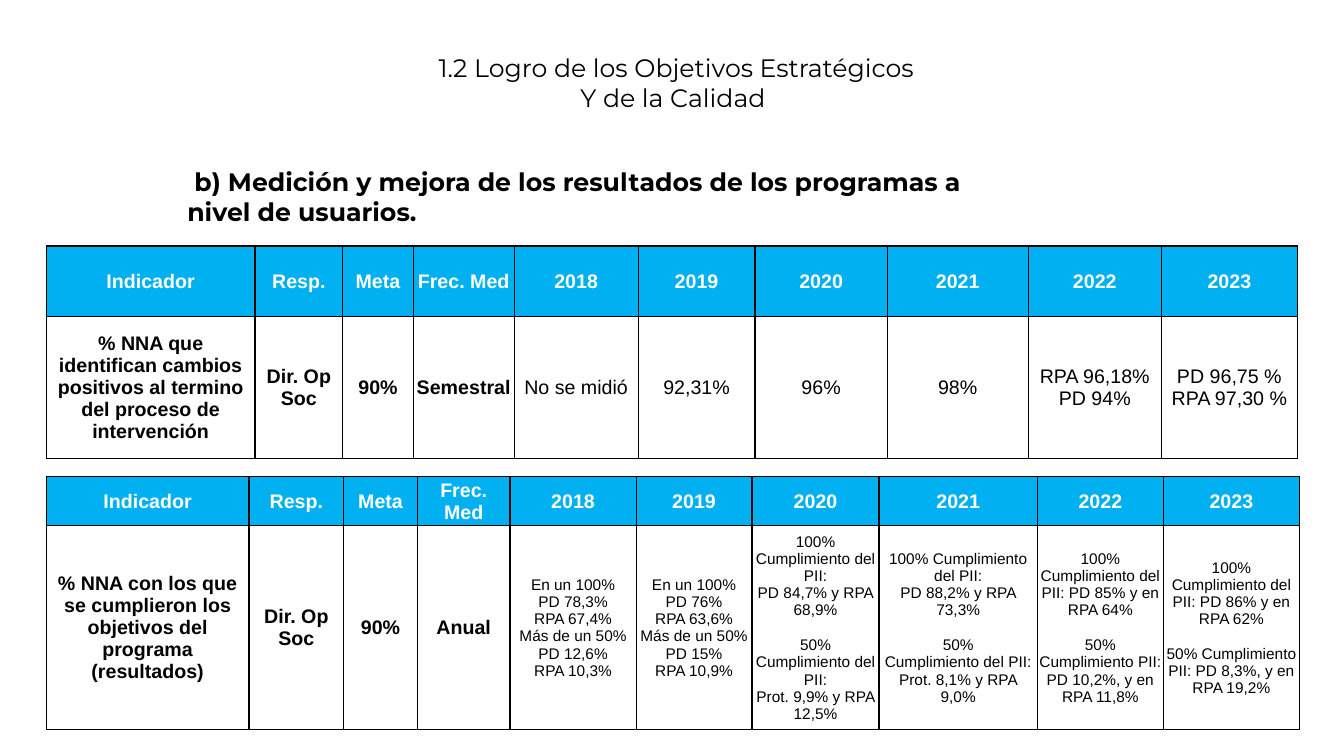
from lxml.etree import SubElement
from pptx import Presentation
from pptx.dml.color import RGBColor
from pptx.enum.text import MSO_ANCHOR, PP_ALIGN
from pptx.oxml.ns import qn
from pptx.util import Inches, Pt

TITLE = [" 1.2 Logro de los Objetivos Estratégicos", "Y de la Calidad"]
TOPIC = [" b) Medición y mejora de los resultados de los programas a nivel de usuarios."]
HEAD = ["Indicador", "Resp.", "Meta", "Frec. Med",
        "2018", "2019", "2020", "2021", "2022", "2023"]
GAP = ""

CHANGE = [
    ["% NNA que identifican cambios positivos al termino del proceso de intervención"],
    ["Dir. Op Soc"], ["90%"], ["Semestral"], ["No se midió"],
    ["92,31%"], ["96%"], ["98%"],
    ["RPA 96,18%", "PD 94%"],
    ["PD 96,75 %", "RPA 97,30 %"],
]
GOALS = [
    ["% NNA con los que se cumplieron los objetivos del programa (resultados)"],
    ["Dir. Op Soc"], ["90%"], ["Anual"],
    ["En un 100%", "PD 78,3%", "RPA 67,4%", "Más de un 50%", "PD 12,6%", "RPA 10,3%"],
    ["En un 100%", "PD 76%", "RPA 63,6%", "Más de un 50%", "PD 15%", "RPA 10,9%"],
    ["100% Cumplimiento del PII:", "PD 84,7% y RPA 68,9%", GAP,
     "50% Cumplimiento del PII:", "Prot. 9,9% y RPA 12,5%"],
    ["100% Cumplimiento del PII:", "PD 88,2% y RPA 73,3%", GAP,
     "50%\vCumplimiento del PII:", "Prot. 8,1% y RPA 9,0%"],
    ["100% Cumplimiento del PII: PD 85% y en RPA 64%", GAP,
     "50% Cumplimiento PII: PD 10,2%, y en RPA 11,8%"],
    ["100% Cumplimiento del PII: PD 86% y en RPA 62%", GAP,
     "50% Cumplimiento PII: PD 8,3%, y en RPA 19,2%"],
]
TABLES = [
    (2.44, [2.07, 0.87, 0.7, 1, 1.23, 1.16, 1.31, 1.4, 1.32, 1.35],
     [0.7, 1.41], CHANGE, 14),
    (4.73, [2.01, 0.94, 0.73, 0.92, 1.25, 1.15, 1.26, 1.57, 1.25, 1.35],
     [0.48, 2.03], GOALS, 11),
]
LEFT = 0.46
LABELS = 4
BLUE, WHITE, BLACK = "00B0F0", "FFFFFF", "000000"


def color(code):
    return RGBColor.from_string(code)


def write(frame, lines, face, size, ink, bold, align):
    frame.word_wrap = True
    first, gap = True, False
    for line in lines:
        if line == GAP:
            gap = True
            continue
        para = frame.paragraphs[0] if first else frame.add_paragraph()
        para.text = line
        para.alignment = align
        if gap:
            para.space_before = Pt(size * 1.15)
        font = para.font
        font.name, font.size, font.bold = face, Pt(size), bold
        font.color.rgb = color(ink)
        first, gap = False, False


def banner(slide, box, lines, bold, align):
    frame = slide.shapes.add_textbox(*map(Inches, box)).text_frame
    frame.vertical_anchor = MSO_ANCHOR.MIDDLE
    write(frame, lines, "Montserrat", 18, BLACK, bold, align)


def border(cell):
    props = cell._tc.get_or_add_tcPr()
    for side in ("lnL", "lnR", "lnT", "lnB"):
        line = SubElement(props, qn("a:" + side), w=str(Pt(1)))
        fill = SubElement(line, qn("a:solidFill"))
        SubElement(fill, qn("a:srgbClr"), val=BLACK)


def grid(slide, top, widths, heights, body, small):
    shape = slide.shapes.add_table(
        2, len(widths), Inches(LEFT), Inches(top),
        Inches(sum(widths)), Inches(sum(heights)))
    table = shape.table
    for col, width in zip(table.columns, widths):
        col.width = Inches(width)
    for row, height in zip(table.rows, heights):
        row.height = Inches(height)
    for r, texts in enumerate([[[name] for name in HEAD], body]):
        for c, lines in enumerate(texts):
            cell = table.cell(r, c)
            cell.margin_left = cell.margin_right = cell.margin_top = Inches(0.01)
            cell.margin_bottom = 0
            cell.vertical_anchor = MSO_ANCHOR.MIDDLE
            border(cell)
            cell.fill.solid()
            cell.fill.fore_color.rgb = color(WHITE if r else BLUE)
            bold = r == 0 or c < LABELS
            write(cell.text_frame, lines, "Arial", 14 if bold else small,
                  BLACK if r else WHITE, bold, PP_ALIGN.CENTER)


def main():
    deck = Presentation()
    deck.slide_width, deck.slide_height = Inches(13.33), Inches(7.5)
    slide = deck.slides.add_slide(deck.slide_layouts[6])
    banner(slide, (2.62, 0.41, 8.11, 0.81), TITLE, False, PP_ALIGN.CENTER)
    banner(slide, (1.76, 1.54, 8.07, 0.81), TOPIC, True, PP_ALIGN.LEFT)
    for item in TABLES:
        grid(slide, *item)
    deck.save("out.pptx")


if __name__ == "__main__":
    main()
